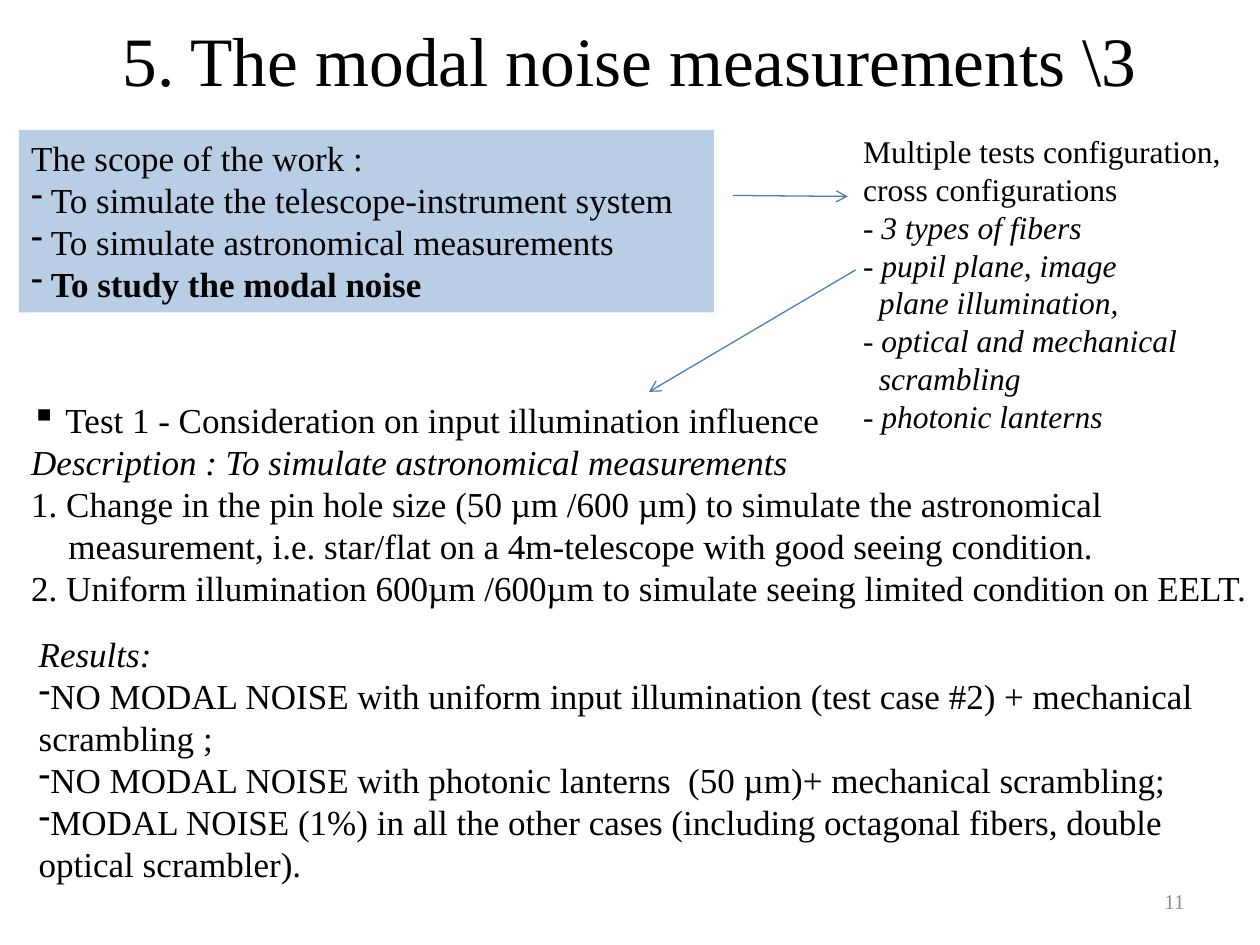
from dataclasses import dataclass

from lxml import etree
from pptx import Presentation
from pptx.dml.color import RGBColor
from pptx.enum import shapes, text
from pptx.oxml import ns
from pptx.util import Cm, Pt

FONT = "Times New Roman"
BLACK, GREY, PALE_BLUE, ARROW_BLUE = "000000", "8C8C8C", "B9CDE5", "4B7EBC"


@dataclass
class Line:
    words: str
    bullet: str = ""
    bold: bool = False
    italic: bool = False
    left: float = 0  # cm
    first: float = 0  # cm, relative to left


@dataclass
class Block:
    left: float
    top: float
    width: float
    height: float
    lines: list[Line]
    size: float = 20
    fill: str = ""
    color: str = BLACK
    align: text.PP_ALIGN = text.PP_ALIGN.LEFT
    anchor: text.MSO_ANCHOR = text.MSO_ANCHOR.TOP


@dataclass
class Arrow:
    start: tuple[float, float]
    end: tuple[float, float]


def rgb(value: str) -> RGBColor:
    return RGBColor.from_string(value)


def write(frame, block: Block) -> None:
    """Fill a text frame with the formatted lines of a block."""
    frame.word_wrap = True
    frame.vertical_anchor = block.anchor
    for number, line in enumerate(block.lines):
        paragraph = frame.paragraphs[0] if number == 0 else frame.add_paragraph()
        paragraph.text = line.words
        paragraph.alignment = block.align
        font = paragraph.font
        font.name, font.size = FONT, Pt(block.size)
        font.bold, font.italic = line.bold, line.italic
        font.color.rgb = rgb(block.color)
        properties = paragraph._p.get_or_add_pPr()
        properties.set("marL", str(Cm(line.left)))
        properties.set("indent", str(Cm(line.first)))
        if line.bullet:
            bullet = etree.Element(ns.qn("a:buChar"), char=line.bullet)
            properties.find(ns.qn("a:defRPr")).addprevious(bullet)


def place(shape, block: Block) -> None:
    shape.left, shape.top = Cm(block.left), Cm(block.top)
    shape.width, shape.height = Cm(block.width), Cm(block.height)


def add_block(slide, block: Block) -> None:
    box = slide.shapes.add_textbox(0, 0, 0, 0)
    place(box, block)
    if block.fill:
        box.fill.solid()
        box.fill.fore_color.rgb = rgb(block.fill)
    write(box.text_frame, block)


def add_arrow(slide, arrow: Arrow) -> None:
    connector = slide.shapes.add_connector(
        shapes.MSO_CONNECTOR.STRAIGHT, *map(Cm, arrow.start + arrow.end))
    connector.line.color.rgb = rgb(ARROW_BLUE)
    connector.line.width = Pt(0.75)
    etree.SubElement(connector.line._get_or_add_ln(), ns.qn("a:tailEnd"), type="arrow")
    etree.SubElement(connector._element.spPr, ns.qn("a:effectLst"))


TITLE = Block(1.27, -0.41, 22.86, 3.18,
              [Line("5. The modal noise measurements \\3")], size=39.6,
              align=text.PP_ALIGN.CENTER, anchor=text.MSO_ANCHOR.MIDDLE)

SCOPE = Block(0.38, 2.62, 14.02, 3.68, [
    Line("The scope of the work :"),
    Line(" To simulate the telescope-instrument system", "-"),
    Line(" To simulate astronomical measurements", "-"),
    Line(" To study the modal noise", "-", bold=True),
], fill=PALE_BLUE)

TEST = Block(0.38, 7.9, 25.4, 4.52, [
    Line(" Test 1 - Consideration on input illumination influence", "▪"),
    Line("Description : To simulate astronomical measurements", italic=True),
    Line("1. Change in the pin hole size (50 µm /600 µm) to simulate the astronomical "
         "measurement, i.e. star/flat on a 4m-telescope with good seeing condition.",
         left=0.75, first=-0.75),
    Line("2. Uniform illumination 600µm /600µm to simulate seeing limited condition on EELT."),
])

RESULTS = Block(0.53, 12.62, 24.87, 5.38, [
    Line("Results:", italic=True),
    Line("NO MODAL NOISE with uniform input illumination (test case #2) + mechanical "
         "scrambling ;", "-"),
    Line("NO MODAL NOISE with photonic lanterns  (50 µm)+ mechanical scrambling;", "-"),
    Line("MODAL NOISE (1%) in all the other cases (including octagonal fibers, double "
         "optical scrambler).", "-"),
])

CONFIGURATIONS = Block(17.15, 2.54, 7.75, 6.4, [
    Line("Multiple tests configuration,"),
    Line("cross configurations"),
    Line("- 3 types of fibers", italic=True),
    Line("- pupil plane, image", italic=True),
    Line("plane illumination,", italic=True, left=0.32),
    Line("- optical and mechanical", italic=True),
    Line("scrambling", italic=True, left=0.32),
    Line("- photonic lanterns", italic=True),
], size=18)

PAGE_NUMBER = Block(18.21, 17.65, 5.92, 1.02, [Line("11")], size=12, color=GREY,
                    align=text.PP_ALIGN.RIGHT, anchor=text.MSO_ANCHOR.MIDDLE)

ARROWS = [Arrow((14.78, 3.94), (17.09, 3.96)),
          Arrow((17.25, 5.44), (13.08, 7.9))]


def main() -> None:
    deck = Presentation()
    deck.slide_width, deck.slide_height = Cm(25.4), Cm(19.05)
    slide = deck.slides.add_slide(deck.slide_layouts[5])

    # Title
    place(slide.shapes.title, TITLE)
    write(slide.shapes.title.text_frame, TITLE)

    # Text blocks and page number
    for block in (SCOPE, TEST, RESULTS, CONFIGURATIONS, PAGE_NUMBER):
        add_block(slide, block)

    # Arrows from scope to configurations to test
    for arrow in ARROWS:
        add_arrow(slide, arrow)

    deck.save("out.pptx")


if __name__ == "__main__":
    main()
